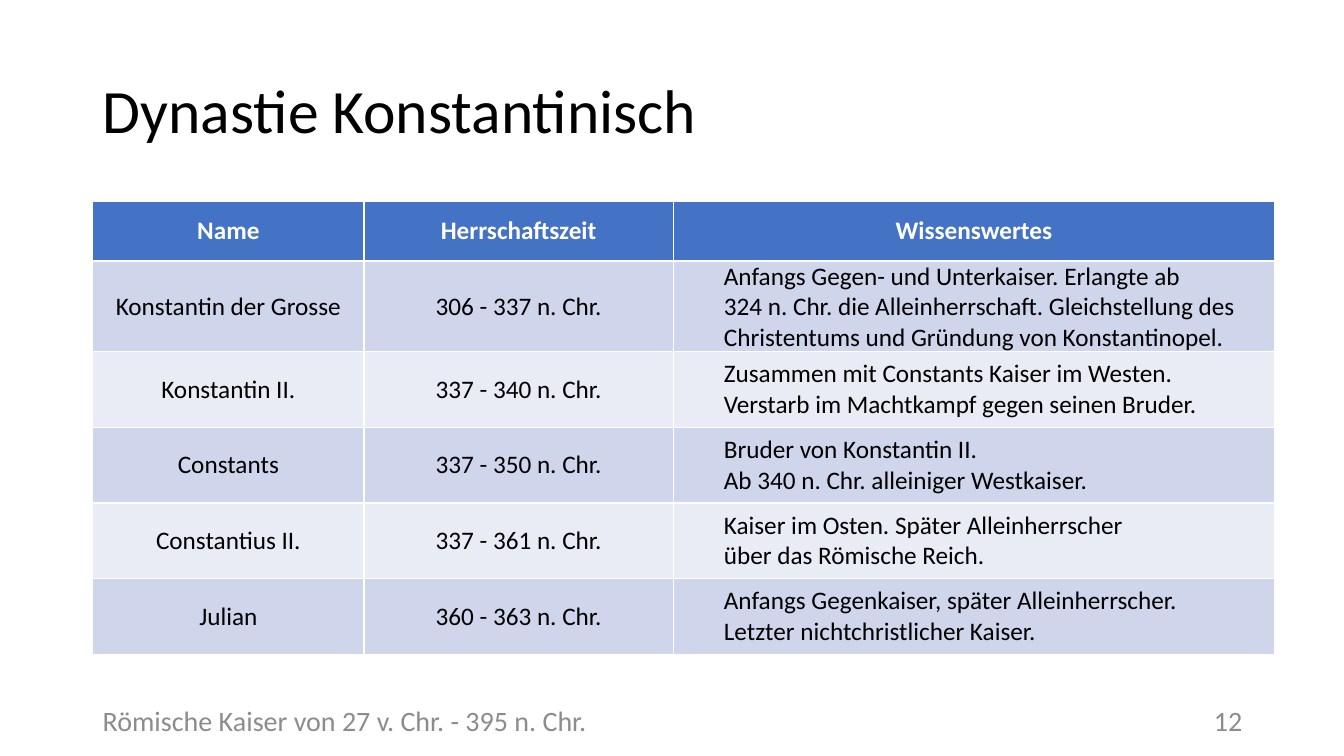
from pptx import Presentation
from pptx.dml.color import RGBColor
from pptx.enum.text import MSO_ANCHOR, PP_ALIGN
from pptx.util import Inches, Pt

MIDDLE = MSO_ANCHOR.MIDDLE
LEFT, CENTER, RIGHT = PP_ALIGN.LEFT, PP_ALIGN.CENTER, PP_ALIGN.RIGHT

FONT = "Calibri"
BLACK, WHITE, GREY = "000000", "FFFFFF", "8C8C8C"
HEAD, BANDS = "4472C4", ("CFD5EA", "E9EBF5")
WIDE, HIGH = 13.33, 7.5
EDGE, SPAN = 0.92, 11.5

COLS = (2.69, 3.07, 5.96)
TOP_ROW, ROW = 0.59, 0.75
RULERS = (
    ("Name", "Herrschaftszeit", "Wissenswertes"),
    ("Konstantin der Grosse", "306 - 337 n. Chr.",
     "Anfangs Gegen- und Unterkaiser. Erlangte ab\n324 n. Chr. die Alleinherrschaft. "
     "Gleichstellung des Christentums und Gründung von Konstantinopel."),
    ("Konstantin II.", "337 - 340 n. Chr.",
     "Zusammen mit Constants Kaiser im Westen.\nVerstarb im Machtkampf gegen seinen Bruder."),
    ("Constants", "337 - 350 n. Chr.",
     "Bruder von Konstantin II.\nAb 340 n. Chr. alleiniger Westkaiser."),
    ("Constantius II.", "337 - 361 n. Chr.",
     "Kaiser im Osten. Später Alleinherrscher\nüber das Römische Reich."),
    ("Julian", "360 - 363 n. Chr.",
     "Anfangs Gegenkaiser, später Alleinherrscher.\nLetzter nichtchristlicher Kaiser."),
)


def color(code):
    return RGBColor.from_string(code)


def write(para, text, size, code, align=LEFT, bold=False):
    para.text = text
    para.alignment = align
    font = para.font
    font.name, font.size, font.bold = FONT, Pt(size), bold
    font.color.rgb = color(code)


def add_text(slide, box, text, size, code, align=LEFT):
    frame = slide.shapes.add_textbox(*map(Inches, box)).text_frame
    frame.word_wrap = True
    frame.vertical_anchor = MIDDLE
    para = frame.paragraphs[0]
    write(para, text, size, code, align)
    return para


def add_title(slide, box, text):
    add_text(slide, box, text, 44, BLACK).line_spacing = 0.9


def fill_cell(cell, text, row, col):
    head = row == 0
    note = col == 2 and not head
    cell.fill.solid()
    cell.fill.fore_color.rgb = color(HEAD if head else BANDS[(row - 1) % 2])
    cell.vertical_anchor = MIDDLE
    cell.margin_left = cell.margin_right = cell.margin_top = cell.margin_bottom = 0
    para = cell.text_frame.paragraphs[0]
    write(para, text, 18, WHITE if head else BLACK, LEFT if note else CENTER, head)
    if note:
        para.level = 1  # the second level brings the indent


def add_rulers(slide, left, top):
    high = TOP_ROW + ROW * (len(RULERS) - 1)
    box = map(Inches, (left, top, sum(COLS), high))
    table = slide.shapes.add_table(len(RULERS), len(COLS), *box).table
    for col, wide in zip(table.columns, COLS):
        col.width = Inches(wide)
    for r, texts in enumerate(RULERS):
        table.rows[r].height = Inches(ROW if r else TOP_ROW)
        for c, text in enumerate(texts):
            fill_cell(table.cell(r, c), text, r, c)


def add_footer(slide, box, text, number):
    left, top, wide, high = box
    part = 3
    add_text(slide, (left + wide - part, top, part, high), number, 20, GREY, RIGHT)
    add_text(slide, (left, top, 8, high), text, 20, GREY)


def main():
    deck = Presentation()
    deck.slide_width, deck.slide_height = Inches(WIDE), Inches(HIGH)
    slide = deck.slides.add_slide(deck.slide_layouts[6])
    add_title(slide, (EDGE, 0.4, SPAN, 1.45), "Dynastie Konstantinisch")
    add_rulers(slide, EDGE, 2)
    add_footer(slide, (EDGE, 6.95, SPAN, 0.4),
               "Römische Kaiser von 27 v. Chr. - 395 n. Chr.", "12")
    deck.save("out.pptx")


if __name__ == "__main__":
    main()
